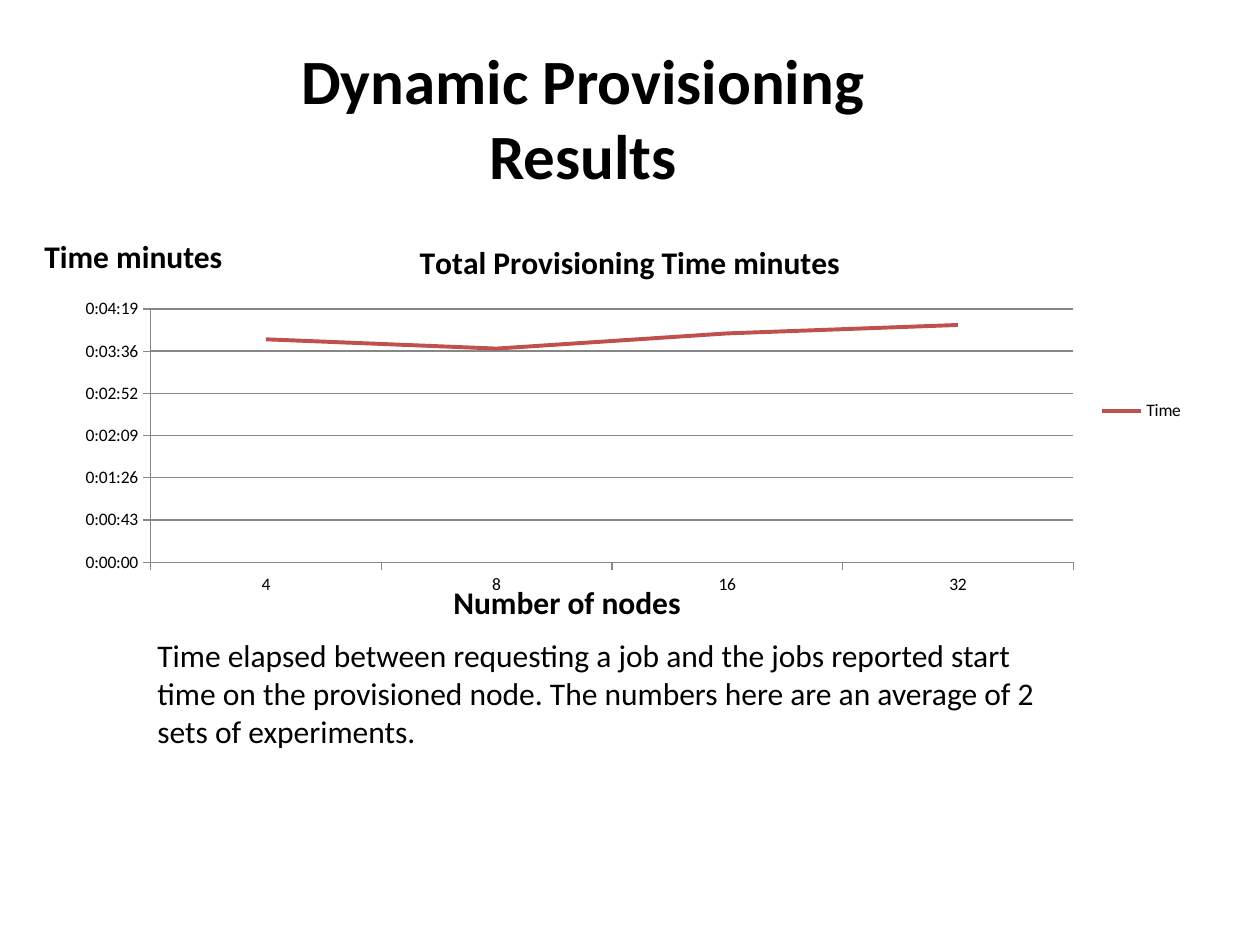
from pptx import Presentation
from pptx.chart.data import CategoryChartData
from pptx.dml.color import RGBColor
from pptx.enum.chart import XL_CHART_TYPE, XL_LEGEND_POSITION, XL_TICK_MARK
from pptx.enum.text import MSO_ANCHOR, MSO_AUTO_SIZE, PP_ALIGN
from pptx.util import Inches, Pt

SCALE = Inches(1) / 126
COLORS = {"text": "000000", "grid": "878787", "time": "C0504D"}


def px(*vals):
    return [round(v * SCALE) for v in vals]


def paint(name):
    return RGBColor.from_string(COLORS[name])


def style(font, size, bold=False):
    form = {"name": "Calibri", "size": Pt(size), "bold": bold}
    for key, val in form.items():
        setattr(font, key, val)
    font.color.rgb = paint("text")


def rule(line, name, width):
    line.color.rgb = paint(name)
    line.width = Pt(width)


def add_title(slide, text, box):
    title = slide.shapes.title
    for key, val in zip(("left", "top", "width", "height"), px(*box)):
        setattr(title, key, val)
    frame = title.text_frame
    frame.text = text
    frame.vertical_anchor = MSO_ANCHOR.MIDDLE
    para = frame.paragraphs[0]
    para.alignment = PP_ALIGN.CENTER
    style(para.runs[0].font, 36, True)


def add_text(slide, text, box, bold=False, wrap=False):
    frame = slide.shapes.add_textbox(*px(*box)).text_frame
    frame.word_wrap = wrap
    frame.auto_size = MSO_AUTO_SIZE.SHAPE_TO_FIT_TEXT
    frame.text = text
    style(frame.paragraphs[0].runs[0].font, 18, bold)


def add_plot(slide, box):
    data = CategoryChartData(number_format="h:mm:ss")
    data.categories = ["4", "8", "16", "32"]
    data.add_series("Time", [0.00264, 0.00253, 0.00271, 0.00281])
    chart = slide.shapes.add_chart(
        XL_CHART_TYPE.LINE_STACKED, *px(*box), data).chart
    style(chart.font, 10)

    # Heading and legend
    chart.has_title = True
    head = chart.chart_title.text_frame
    head.text = "Total Provisioning Time minutes"
    style(head.paragraphs[0].runs[0].font, 18, True)
    chart.has_legend = True
    chart.legend.position = XL_LEGEND_POSITION.RIGHT
    chart.legend.include_in_layout = False

    # Axes
    for axis in (chart.category_axis, chart.value_axis):
        axis.major_tick_mark = XL_TICK_MARK.OUTSIDE
        axis.minor_tick_mark = XL_TICK_MARK.NONE
        rule(axis.format.line, "grid", 0.75)
    scale = {"minimum_scale": 0, "maximum_scale": 0.003, "major_unit": 0.0005}
    for key, val in scale.items():
        setattr(axis, key, val)
    axis.tick_labels.number_format = "h:mm:ss"
    axis.tick_labels.number_format_is_linked = False
    rule(axis.major_gridlines.format.line, "grid", 0.75)

    # Time line
    plot = chart.plots[0]
    plot.vary_by_categories = False
    time = plot.series[0]
    time.smooth = False
    rule(time.format.line, "time", 2.25)


def main():
    deck = Presentation()
    deck.slide_width, deck.slide_height = px(1260, 945)
    slide = deck.slides.add_slide(deck.slide_layouts[5])
    add_title(slide, "Dynamic Provisioning Results", (210, 38, 746, 158))
    add_plot(slide, (63, 220, 1134, 382))

    # Explanation and axis names
    add_text(slide, "Time elapsed between requesting a job and the jobs "
             "reported start time on the provisioned node. The numbers here "
             "are an average of 2 sets of experiments.",
             (145, 630, 942, 127), wrap=True)
    add_text(slide, "Time minutes", (32, 231, 204, 50), bold=True)
    add_text(slide, "Number of nodes", (441, 577, 255, 50), bold=True)
    deck.save("out.pptx")


if __name__ == "__main__":
    main()
